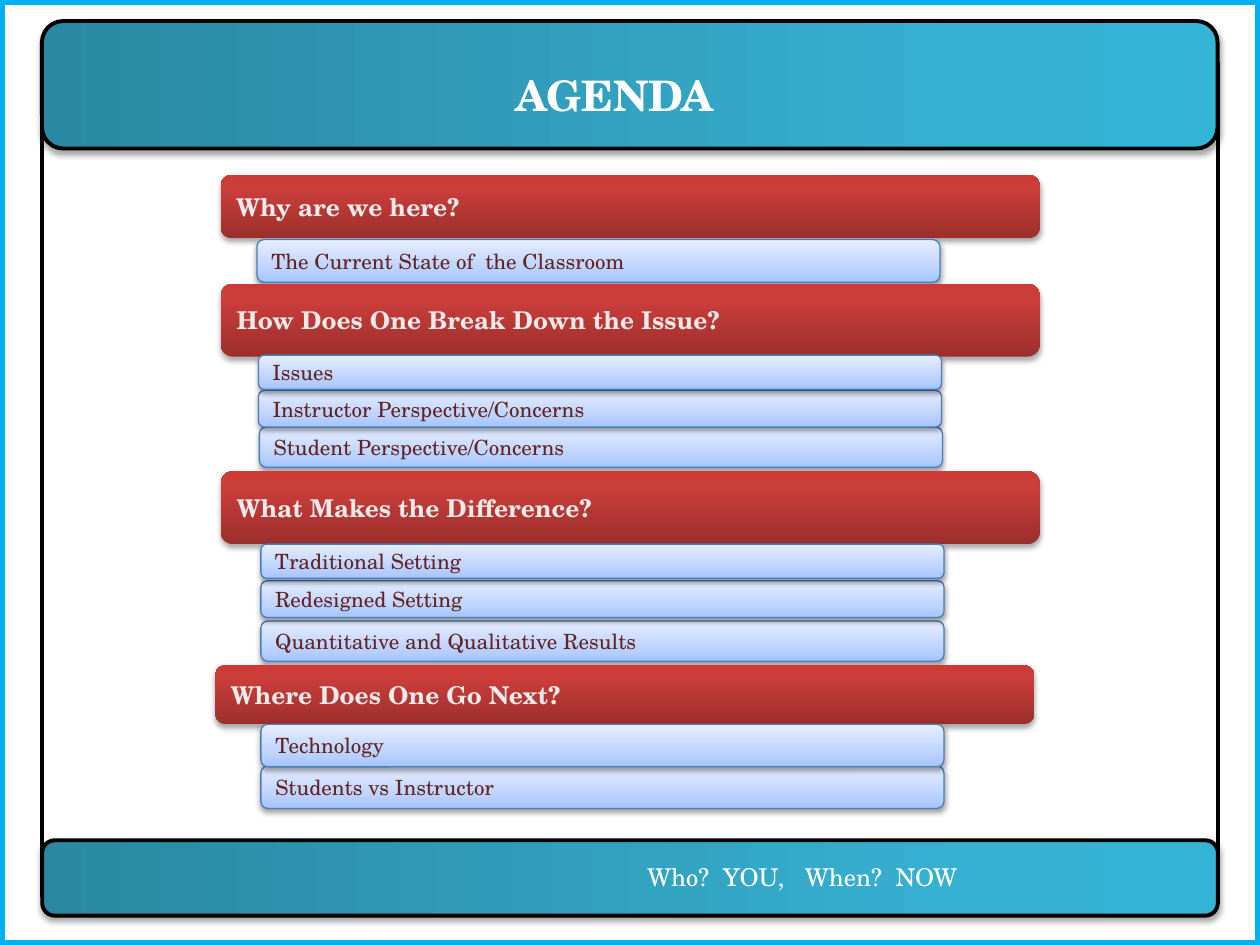
from lxml import etree
from pptx import Presentation
from pptx.dml.color import RGBColor
from pptx.enum.shapes import MSO_SHAPE
from pptx.enum.text import MSO_ANCHOR, PP_ALIGN
from pptx.oxml.ns import qn
from pptx.util import Cm, Pt

RECTANGLE = MSO_SHAPE.RECTANGLE
ROUNDED = MSO_SHAPE.ROUNDED_RECTANGLE
PROCESS = MSO_SHAPE.FLOWCHART_PROCESS
ALTERNATE = MSO_SHAPE.FLOWCHART_ALTERNATE_PROCESS
MIDDLE = MSO_ANCHOR.MIDDLE
LEFT, CENTER = PP_ALIGN.LEFT, PP_ALIGN.CENTER

FONT = "TeX Gyre Schola"
COLORS = {
    "white": "FFFFFF", "black": "000000", "border": "00B0F0",
    "item_line": "4B7EBC", "item_text": "632523", "heading_text": "EAEAEA",
}
GRADIENTS = {
    "banner": ((0, "2A88A2"), (80, "37B1D2"), (100, "34B4D6")),
    "heading": ((0, "9C2F2D"), (80, "CB3E3A"), (100, "CE3B37")),
    "item": ((0, "A4C4FF"), (35, "BFD4FF"), (100, "E6EEFF")),
}
HEADING_WIDTH, ITEM_WIDTH = 16.51, 13.77
AGENDA = [
    (("Why are we here?", 4.45, 3.53, 1.27),
     [("The Current State of  the Classroom", 5.18, 4.83, 0.86)]),
    (("How Does One Break Down the Issue?", 4.45, 5.72, 1.47),
     [("Issues", 5.21, 7.16, 0.69),
      ("Instructor Perspective/Concerns", 5.21, 7.87, 0.74),
      ("Student Perspective/Concerns", 5.23, 8.61, 0.81)]),
    (("What Makes the Difference?", 4.45, 9.5, 1.47),
     [("Traditional Setting", 5.26, 10.97, 0.69),
      ("Redesigned Setting", 5.26, 11.71, 0.74),
      ("Quantitative and Qualitative Results", 5.26, 12.52, 0.81)]),
    (("Where Does One Go Next?", 4.34, 13.41, 1.19),
     [("Technology", 5.26, 14.6, 0.86),
      ("Students vs Instructor", 5.26, 15.44, 0.86)]),
]


def color(name):
    """Return the named colour."""
    return RGBColor.from_string(COLORS[name])


def add_box(slide, kind, box, fill=None, line=None, width=0.75):
    """Add a preset shape with an optional plain fill and outline."""
    shape = slide.shapes.add_shape(kind, *map(Cm, box))
    shape.shadow.inherit = False
    if fill:
        shape.fill.solid()
        shape.fill.fore_color.rgb = color(fill)
    else:
        shape.fill.background()
    if line:
        shape.line.color.rgb = color(line)
        shape.line.width = Pt(width)
    else:
        shape.line.fill.background()
    return shape


def add_color_element(parent, value):
    """Append an RGB colour element to a parent."""
    return etree.SubElement(parent, qn("a:srgbClr"), val=value)


def set_gradient(shape, name):
    """Fill a shape with a three-stop gradient rising from its bottom edge."""
    shape.fill.gradient()
    shape.fill.gradient_angle = 90
    stops = shape.element.spPr.find(".//" + qn("a:gsLst"))
    for stop in list(stops):
        stops.remove(stop)
    for position, value in GRADIENTS[name]:
        stop = etree.SubElement(stops, qn("a:gs"), pos=str(position * 1000))
        add_color_element(stop, value)


def set_shadow(shape, distance, opacity):
    """Drop a soft shadow straight below a shape."""
    effects = shape.element.spPr.find(qn("a:effectLst"))
    shadow = etree.SubElement(
        effects, qn("a:outerShdw"), blurRad=str(Pt(3.15)),
        dist=str(Pt(distance)), dir="5400000", rotWithShape="0")
    tint = add_color_element(shadow, COLORS["black"])
    etree.SubElement(tint, qn("a:alpha"), val=str(opacity * 1000))


def set_text(shape, text, size, text_color, alignment=LEFT, bold=False):
    """Write one vertically centred line into a shape."""
    frame = shape.text_frame
    frame.word_wrap = True
    frame.vertical_anchor = MIDDLE
    paragraph = frame.paragraphs[0]
    paragraph.alignment = alignment
    run = paragraph.add_run()
    run.text = text
    run.font.name = FONT
    run.font.size = Pt(size)
    run.font.bold = bold
    run.font.color.rgb = color(text_color)


def add_banner(slide, box):
    """Add a banner, turned so that its gradient runs left to right."""
    shape = add_box(slide, ALTERNATE, box, line="black", width=2.25)
    shape.rotation = 90
    set_gradient(shape, "banner")
    set_shadow(shape, 1.8, 35)


def add_heading(slide, text, left, top, height):
    """Add a red agenda heading."""
    shape = add_box(slide, ALTERNATE, (left, top, HEADING_WIDTH, height))
    set_gradient(shape, "heading")
    set_shadow(shape, 1.8, 35)
    set_text(shape, text, 14, "heading_text", bold=True)


def add_item(slide, text, left, top, height):
    """Add a blue agenda item."""
    shape = add_box(slide, ROUNDED, (left, top, ITEM_WIDTH, height), line="item_line")
    set_gradient(shape, "item")
    set_shadow(shape, 1.6, 38)
    set_text(shape, text, 12, "item_text")


def add_section(slide, heading, items):
    """Add a heading and its items, the first item lying on top."""
    for item in reversed(items[1:]):
        add_item(slide, *item)
    add_heading(slide, *heading)
    add_item(slide, *items[0])


def add_footer(slide, text):
    """Add the text on the bottom banner."""
    box = slide.shapes.add_textbox(Cm(7.82), Cm(17.25), Cm(16.71), Cm(0.84))
    set_text(box, text, 14, "white", CENTER)


def main():
    """Build the agenda slide."""
    presentation = Presentation()
    presentation.slide_width, presentation.slide_height = Cm(25.4), Cm(19.05)
    slide = presentation.slides.add_slide(presentation.slide_layouts[6])
    add_box(slide, RECTANGLE, (0, 0, 25.4, 19.05), "white", "border", 6)
    add_box(slide, PROCESS, (0.85, 1.27, 23.7, 16.09), "white", "black", 2.25)
    add_banner(slide, (11.41, -10.14, 2.57, 23.7))
    add_banner(slide, (11.94, 5.85, 1.52, 23.7))
    for heading, items in AGENDA:
        add_section(slide, heading, items)
    title = add_box(slide, ROUNDED, (4.45, 1.27, 15.88, 1.27))
    set_text(title, "AGENDA", 24, "white", CENTER, bold=True)
    add_footer(slide, "Who?  YOU,   When?  NOW")
    presentation.save("out.pptx")


if __name__ == "__main__":
    main()
